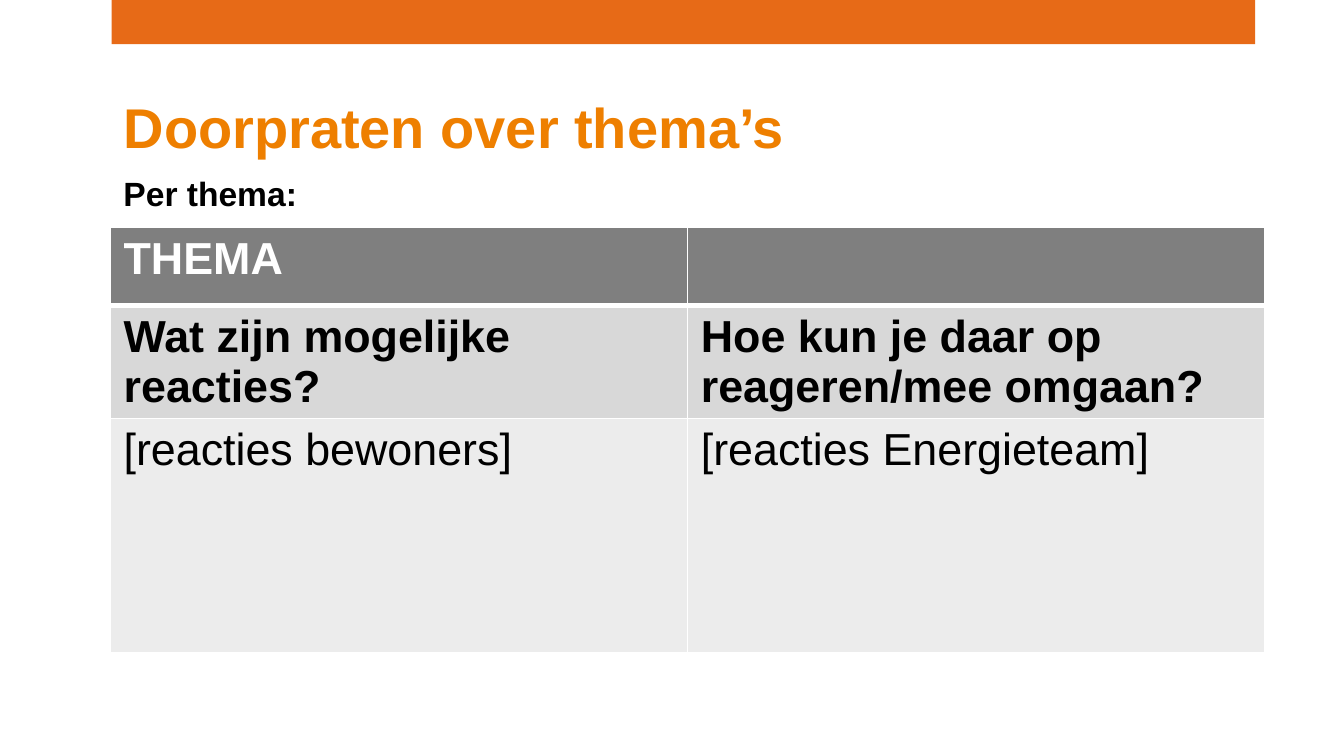
from lxml import etree
from pptx import Presentation
from pptx.dml.color import RGBColor
from pptx.enum.shapes import MSO_SHAPE
from pptx.enum.text import MSO_ANCHOR, MSO_AUTO_SIZE, PP_ALIGN
from pptx.oxml.ns import qn
from pptx.util import Inches, Pt

RECTANGLE = MSO_SHAPE.RECTANGLE
TOP, BOTTOM = MSO_ANCHOR.TOP, MSO_ANCHOR.BOTTOM
LEFT = PP_ALIGN.LEFT
NO_AUTOFIT = MSO_AUTO_SIZE.NONE
TITLE_ONLY = 5

PAGE_WIDTH = 10
PAGE_HEIGHT = PAGE_WIDTH * 9 / 16
FONT = "Arial"
COLORS = {
    "bar": "E76A17",
    "title": "EE7F00",
    "header": "7F7F7F",
    "question": "D8D8D8",
    "answer": "ECECEC",
    "white": "FFFFFF",
    "black": "000000",
}

# Each row: height, fill, text colour, bold, line width below, cell texts
THEME_ROWS = [
    (0.58, "header", "white", True, 3, ["THEMA", ""]),
    (0.62, "question", "black", True, 1,
     ["Wat zijn mogelijke reacties?", "Hoe kun je daar op reageren/mee omgaan?"]),
    (1.74, "answer", "black", False, 1,
     ["[reacties bewoners]", "[reacties Energieteam]"]),
]


def color(name):
    return RGBColor.from_string(COLORS[name])


def write_text(frame, text, size, color_name, bold=True):
    frame.text = text
    para = frame.paragraphs[0]
    para.alignment = LEFT
    para.line_spacing = 1.0
    para.font.size = Pt(size)
    for span in para.runs:
        span.font.name = FONT
        span.font.size = Pt(size)
        span.font.bold = bold
        span.font.color.rgb = color(color_name)


def place(shape, box):
    shape.left, shape.top, shape.width, shape.height = map(Inches, box)


def set_frame(frame, anchor, top, bottom):
    frame.word_wrap = True
    frame.auto_size = NO_AUTOFIT
    frame.vertical_anchor = anchor
    frame.margin_left = frame.margin_right = Inches(0.1)
    frame.margin_top, frame.margin_bottom = Inches(top), Inches(bottom)


def make_border(side, width):
    line = etree.Element(qn(f"a:ln{side}"), w=str(Pt(width)))
    fill = etree.SubElement(line, qn("a:solidFill"))
    etree.SubElement(fill, qn("a:srgbClr"), val=COLORS["white"])
    return line


def add_bar(page, box):
    bar = page.shapes.add_shape(RECTANGLE, *map(Inches, box))
    bar.shadow.inherit = False
    bar.fill.solid()
    bar.fill.fore_color.rgb = color("bar")
    bar.line.fill.background()


def add_heading(page, box):
    left, top, width, height = box
    title_height = 0.53
    title = page.shapes.title
    place(title, (left, top, width, title_height))
    set_frame(title.text_frame, BOTTOM, 0, 0.05)
    write_text(title.text_frame, "Doorpraten over thema’s", 30, "title")

    subtitle_box = (left, top + title_height, width, height - title_height)
    subtitle = page.shapes.add_textbox(*map(Inches, subtitle_box))
    set_frame(subtitle.text_frame, TOP, 0.05, 0)
    write_text(subtitle.text_frame, "Per thema:", 18, "black")


def add_theme_table(page, box):
    frame = page.shapes.add_table(len(THEME_ROWS), 2, *map(Inches, box))
    table = frame.table
    for column in table.columns:
        column.width = Inches(box[2] / 2)
    line_above = 1
    for row_index, row in enumerate(THEME_ROWS):
        height, fill, text_color, bold, line_below, texts = row
        table.rows[row_index].height = Inches(height)
        for column_index, text in enumerate(texts):
            cell = table.cell(row_index, column_index)
            write_text(cell.text_frame, text, 24, text_color, bold)
            cell.fill.solid()
            cell.fill.fore_color.rgb = color(fill)
            # Borders come before the fill in the cell properties
            properties = cell._tc.get_or_add_tcPr()
            widths = {"L": 1, "R": 1, "T": line_above, "B": line_below}
            for position, (side, width) in enumerate(widths.items()):
                properties.insert(position, make_border(side, width))
        line_above = line_below


def main():
    deck = Presentation()
    deck.slide_width, deck.slide_height = Inches(PAGE_WIDTH), Inches(PAGE_HEIGHT)
    page = deck.slides.add_slide(deck.slide_layouts[TITLE_ONLY])
    page.background.fill.solid()
    page.background.fill.fore_color.rgb = color("white")

    add_bar(page, (0.83, 0, 8.51, 0.33))
    add_heading(page, (0.82, 0.71, 8.52, 0.83))
    add_theme_table(page, (0.82, 1.69, 8.59, 2.94))
    deck.save("out.pptx")


if __name__ == "__main__":
    main()
